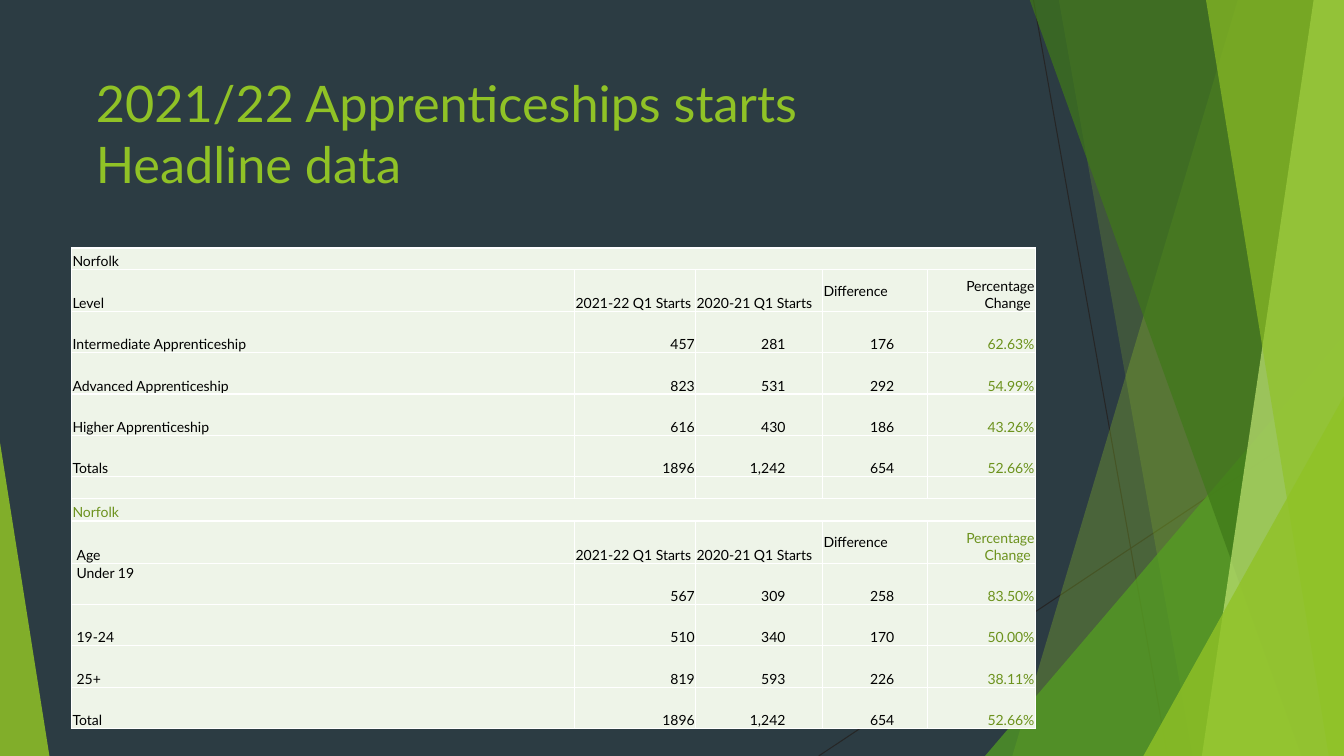
import pptx
import pptx.util
import pptx.dml.color
import pptx.enum.shapes
import pptx.enum.text
import pptx.oxml
import pptx.oxml.ns

Inch = pptx.util.Inches
Shape = pptx.enum.shapes.MSO_SHAPE
Align = pptx.enum.text.PP_ALIGN
Anchor = pptx.enum.text.MSO_ANCHOR
W, H = 13.33, 7.5

theme = {
    "font": "Lato", "title": 36, "body": 10,
    "back": "2C3C43", "line": "262626", "lime": "90C226", "leaf": "54A021",
    "moss": "3F7819", "pale": "C0E474", "cell": "EEF4E8", "edge": "FFFFFF",
    "text": "000000", "green": "6C921D",
}


def tint(fill, name, share=100):
    """Solid theme colour, opaque to the given percentage."""
    fill.solid()
    fill.fore_color.rgb = pptx.dml.color.RGBColor.from_string(theme[name])
    if share < 100:
        color = fill._xPr.find(".//" + pptx.oxml.ns.qn("a:srgbClr"))
        alpha = pptx.oxml.parse_xml(
            f'<a:alpha {pptx.oxml.ns.nsdecls("a")} val="{share * 1000}"/>')
        color.append(alpha)


def style(para, size, name, align):
    para.alignment = align
    para.font.name = theme["font"]
    para.font.size = pptx.util.Pt(theme[size])
    para.font.color.rgb = pptx.dml.color.RGBColor.from_string(theme[name])


deck = pptx.Presentation()
deck.slide_width, deck.slide_height = Inch(W), Inch(H)
slide = deck.slides.add_slide(deck.slide_layouts[5])
tint(slide.background.fill, "back")
shapes = slide.shapes

# Thin lines behind the facets
for x1, y1, x2, y2 in [(10.25, 0, 11.58, H), (W, 4.03, 8.12, H)]:
    line = shapes.add_connector(pptx.enum.shapes.MSO_CONNECTOR.STRAIGHT,
                                Inch(x1), Inch(y1), Inch(x2), Inch(y2))
    tint(line.line.fill, "line")
    line.line.width = pptx.util.Pt(0.75)
    line._element.spPr.append(pptx.oxml.parse_xml(
        f'<a:effectLst {pptx.oxml.ns.nsdecls("a")}/>'))

# Facets: bands give top and foot x; peaks give left, width, height and tip
facets = [
    ("band", (12.28, 10.04), "lime", 30),
    ("band", (10.5, 11.83), "lime", 20),
    ("peak", (9.77, 3.56, 4.17, 1), "leaf", 72),
    ("band", (10.21, 12.91), "moss", 70),
    ("band", (13.03, 11.92), "pale", 70),
    ("band", (11.96, 13.18), "lime", 65),
    ("peak", (11.34, 1.99, 3.57, 1), "lime", 80),
    ("peak", (0, 0.49, 3.11, 0), "lime", 85),
]
for kind, size, name, share in facets:
    if kind == "band":
        top, foot = size
        path = shapes.build_freeform(Inch(top), Inch(-0.01))
        path.add_line_segments([(Inch(x), Inch(y)) for x, y in
                                [(W, -0.01), (W, H), (foot, H)]])
        facet = path.convert_to_shape()
    else:
        left, wide, high, tip = size
        facet = shapes.add_shape(Shape.ISOSCELES_TRIANGLE, Inch(left),
                                 Inch(H - high), Inch(wide), Inch(high))
        facet.adjustments[0] = tip
    facet.shadow.inherit = False
    facet.line.fill.background()
    tint(facet.fill, name, share)

# Title, in front of the facets
title = shapes.title
title.left, title.top = Inch(0.85), Inch(0.67)
title.width, title.height = Inch(9.4), Inch(1.44)
title.text_frame.text = "2021/22 Apprenticeships starts\vHeadline data"
title.text_frame.vertical_anchor = Anchor.TOP
title.text_frame.word_wrap = True
style(title.text_frame.paragraphs[0], "title", "lime", Align.LEFT)
shapes._spTree.append(title._element)

# Table of starts by level and by age
heads = ["2021-22 Q1 Starts", "2020-21 Q1 Starts", "Difference",
         "Percentage Change "]
rows = [
    ["Norfolk"],
    ["Level"] + heads,
    ["Intermediate Apprenticeship", "457", "281", "176", "62.63%"],
    ["Advanced Apprenticeship", "823", "531", "292", "54.99%"],
    ["Higher Apprenticeship", "616", "430", "186", "43.26%"],
    ["Totals", "1896", "1,242", "654", "52.66%"],
    [""] * 5,
    ["Norfolk"],
    ["Age"] + heads,
    ["Under 19", "567", "309", "258", "83.50%"],
    ["19-24", "510", "340", "170", "50.00%"],
    ["25+", "819", "593", "226", "38.11%"],
    ["Total", "1896", "1,242", "654", "52.66%"],
]
wide = [4.99, 1.2, 1.26, 1.04, 1.07]
high = [0.21, 0.42] + [0.41] * 4 + [0.22, 0.22, 0.42] + [0.41] * 4
inset = [0.01, 0.01, 0.37, 0.33, 0.01]   # right margin of the figures
table = shapes.add_table(len(rows), len(wide), Inch(0.71), Inch(2.46),
                         Inch(sum(wide)), Inch(sum(high))).table
table.first_row = table.horz_banding = False
for col, size in zip(table.columns, wide):
    col.width = Inch(size)

for r, row in enumerate(rows):
    table.rows[r].height = Inch(high[r])
    if len(row) == 1:
        table.cell(r, 0).merge(table.cell(r, 4))
    for c in range(len(wide)):
        cell = table.cell(r, c)
        text = row[c] if c < len(row) else ""
        head = text in heads
        cell.text = text
        cell.margin_left = Inch(0.05 if c == 0 and 8 <= r <= 11 else 0.01)
        cell.margin_right = Inch(0.01 if head else inset[c])
        cell.margin_top, cell.margin_bottom = Inch(0.01), 0
        cell.vertical_anchor = (Anchor.MIDDLE if text == "Difference" else
                                Anchor.TOP if text == "Under 19" else
                                Anchor.BOTTOM)
        green = (c == 4 and r != 1) or (c == 0 and r == 7)
        right = c == 4 or (c > 0 and not head)
        para = cell.text_frame.paragraphs[0]
        style(para, "body", "green" if green else "text",
              Align.RIGHT if right else Align.LEFT)
        if not text:
            para._p.append(pptx.oxml.parse_xml(
                f'<a:endParaRPr {pptx.oxml.ns.nsdecls("a")} '
                f'sz="{theme["body"] * 100}"/>'))
        tint(cell.fill, "cell")
        for i, side in enumerate("LRTB"):
            cell._tc.get_or_add_tcPr().insert(i, pptx.oxml.parse_xml(
                f'<a:ln{side} {pptx.oxml.ns.nsdecls("a")} w="12700">'
                f'<a:solidFill><a:srgbClr val="{theme["edge"]}"/>'
                f'</a:solidFill></a:ln{side}>'))

deck.save("out.pptx")
